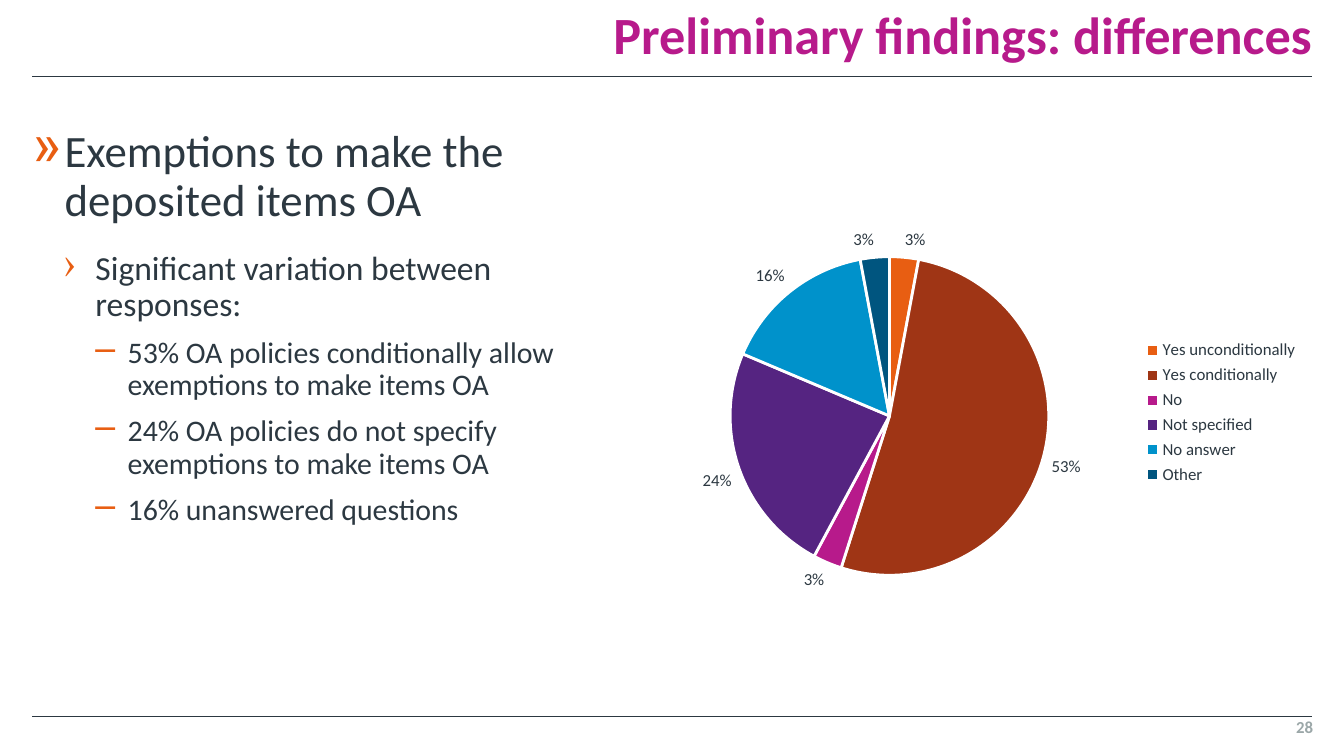
from lxml.etree import SubElement
from pptx import Presentation
from pptx.chart.data import CategoryChartData
from pptx.dml.color import RGBColor
from pptx.enum.chart import XL_CHART_TYPE, XL_LABEL_POSITION, XL_LEGEND_POSITION
from pptx.enum.shapes import MSO_CONNECTOR
from pptx.enum.text import MSO_ANCHOR, PP_ALIGN
from pptx.oxml.ns import qn
from pptx.util import Inches, Pt

FONT = "Calibri"
COLORS = {
    "ink": "2C3841",
    "title": "B71A8B",
    "bullet": "E85E12",
    "page": "9BA7A8",
    "separator": "FFFFFF",
}
SLIDE_WIDTH = 10
LEFT, RIGHT = 0.24, 9.76
HANGING = 0.24

# Bullet, left margin, text size and space before for each outline level
LEVELS = [("»", 0.24, 24, 0), ("›", 0.47, 18, 7.5), ("–", 0.71, 16, 7.5)]
FINDINGS = [
    (0, "Exemptions to make the deposited items OA"),
    (1, "Significant variation between responses:"),
    (2, "53% OA policies conditionally allow exemptions to make items OA"),
    (2, "24% OA policies do not specify exemptions to make items OA"),
    (2, "16% unanswered questions"),
]
ANSWERS = [
    ("Yes unconditionally", 0.03, "E85E12"),
    ("Yes conditionally", 0.53, "9F3515"),
    ("No", 0.03, "B71A8B"),
    ("Not specified", 0.24, "552481"),
    ("No answer", 0.16, "0092CB"),
    ("Other", 0.03, "00557F"),
]


def rgb(name):
    return RGBColor.from_string(COLORS[name])


def style_font(font, size, color, bold=False):
    font.name = FONT
    font.size = Pt(size)
    font.bold = bold
    font.color.rgb = rgb(color)


def add_frame(slide, box, anchor=MSO_ANCHOR.TOP):
    """Add a wrapping text box without margins and return its text frame."""
    frame = slide.shapes.add_textbox(*map(Inches, box)).text_frame
    frame.word_wrap = True
    frame.vertical_anchor = anchor
    frame.margin_left = frame.margin_right = 0
    frame.margin_top = frame.margin_bottom = 0
    return frame


def add_rule(slide, y):
    rule = slide.shapes.add_connector(
        MSO_CONNECTOR.STRAIGHT, Inches(LEFT), Inches(y), Inches(RIGHT), Inches(y)
    )
    rule.line.color.rgb = rgb("ink")
    rule.line.width = Pt(0.5)
    SubElement(rule._element.spPr, qn("a:effectLst"))


def add_right_aligned(slide, box, text, size, color, anchor=MSO_ANCHOR.TOP):
    paragraph = add_frame(slide, box, anchor).paragraphs[0]
    paragraph.text = text
    paragraph.alignment = PP_ALIGN.RIGHT
    style_font(paragraph.runs[0].font, size, color, bold=True)
    return paragraph


def add_bullet(paragraph, char, margin):
    props = paragraph._p.get_or_add_pPr()
    props.set("marL", str(Inches(margin)))
    props.set("indent", str(-Inches(HANGING)))
    color = SubElement(props, qn("a:buClr"))
    SubElement(color, qn("a:srgbClr"), val=COLORS["bullet"])
    SubElement(props, qn("a:buSzPct"), val="120000")
    SubElement(props, qn("a:buChar"), char=char)


def add_findings(slide, box):
    frame = add_frame(slide, box)
    for index, (level, text) in enumerate(FINDINGS):
        paragraph = frame.add_paragraph() if index else frame.paragraphs[0]
        char, margin, size, space_before = LEVELS[level]
        paragraph.text = text
        paragraph.level = level
        add_bullet(paragraph, char, margin)
        paragraph.line_spacing = 0.9
        paragraph.space_before = Pt(space_before)
        paragraph.space_after = Pt(0 if level else 6)
        style_font(paragraph.runs[0].font, size, "ink")


def add_answers_pie(slide, box):
    data = CategoryChartData(number_format="0%")
    data.categories = [name for name, _, _ in ANSWERS]
    data.add_series("Series 1", [share for _, share, _ in ANSWERS])
    chart = slide.shapes.add_chart(
        XL_CHART_TYPE.PIE, *map(Inches, box), data
    ).chart
    style_font(chart.font, 10, "ink")
    chart.has_title = False
    chart.has_legend = True
    chart.legend.position = XL_LEGEND_POSITION.RIGHT
    chart.legend.include_in_layout = False
    style_font(chart.legend.font, 9, "ink")

    pie = chart.plots[0]
    pie.vary_by_categories = True
    pie.has_data_labels = True
    labels = pie.data_labels
    labels.show_value = True
    labels.show_percentage = False
    labels.number_format = "0%"
    labels.number_format_is_linked = False
    labels.position = XL_LABEL_POSITION.OUTSIDE_END
    style_font(labels.font, 9, "ink")

    for index, (_, _, color) in enumerate(ANSWERS):
        slice_format = pie.series[0].points[index].format
        slice_format.fill.solid()
        slice_format.fill.fore_color.rgb = RGBColor.from_string(color)
        slice_format.line.color.rgb = rgb("separator")
        slice_format.line.width = Pt(1.5)


def build_findings_slide(deck):
    slide = deck.slides.add_slide(deck.slide_layouts[6])
    add_rule(slide, 0.57)
    add_rule(slide, 5.33)
    title = add_right_aligned(
        slide, (3.03, 0, 6.73, 0.49), "Preliminary findings: differences",
        28, "title", MSO_ANCHOR.BOTTOM,
    )
    title.line_spacing = 0.9
    add_findings(slide, (LEFT, 0.96, 4.49, 4.21))
    add_answers_pie(slide, (4.76, 1.57, 5, 3))
    add_right_aligned(slide, (8.98, 5.33, 0.79, 0.18), "28", 9, "page")


def main():
    deck = Presentation()
    deck.slide_width = Inches(SLIDE_WIDTH)
    deck.slide_height = Inches(SLIDE_WIDTH * 9 / 16)
    build_findings_slide(deck)
    deck.save("out.pptx")


if __name__ == "__main__":
    main()
